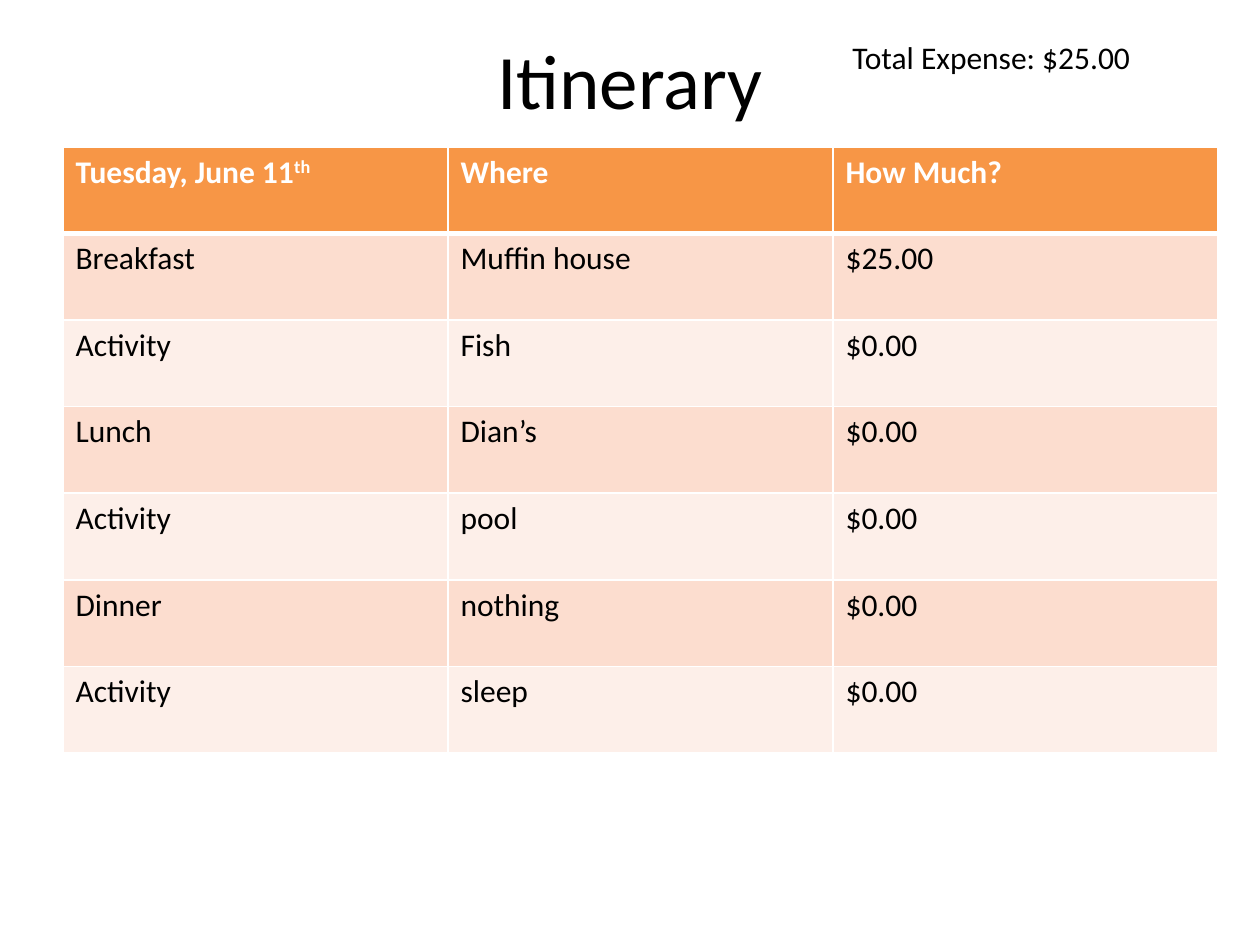
from lxml import etree
from pptx import Presentation
from pptx import util as u
from pptx.dml.color import RGBColor
from pptx.enum import text
from pptx.oxml import ns

PX = 914400 / 126
BLACK = RGBColor(0x00, 0x00, 0x00)
WHITE = RGBColor(0xFF, 0xFF, 0xFF)
ORANGE = RGBColor(0xF7, 0x96, 0x46)
PEACH = RGBColor(0xFC, 0xDD, 0xCF)
PALE_PEACH = RGBColor(0xFD, 0xEF, 0xE9)

HEADER = ["Tuesday, June 11", "Where", "How Much?"]
PLANS = [
    ["Breakfast", "Muffin house", "$25.00"],
    ["Activity", "Fish", "$0.00"],
    ["Lunch", "Dian’s", "$0.00"],
    ["Activity", "pool", "$0.00"],
    ["Dinner", "nothing", "$0.00"],
    ["Activity", "sleep", "$0.00"],
]


def px(*lengths):
    return [u.Emu(round(length * PX)) for length in lengths]


class SlideBuilder:
    font = "Calibri"
    body_size = 18
    title_size = 44

    def __init__(self, page):
        self.page = page

    def style(self, para, size, color, bold=False):
        for span in para.runs:
            span.font.name = self.font
            span.font.size = u.Pt(size)
            span.font.color.rgb = color
            span.font.bold = bold

    def title(self, words, *place):
        box = self.page.shapes.title
        box.left, box.top, box.width, box.height = px(*place)
        frame = box.text_frame
        frame.text = words
        frame.vertical_anchor = text.MSO_ANCHOR.MIDDLE
        para = frame.paragraphs[0]
        para.alignment = text.PP_ALIGN.CENTER
        self.style(para, self.title_size, BLACK)

    def label(self, words, *place):
        frame = self.page.shapes.add_textbox(*px(*place)).text_frame
        frame.word_wrap = True
        frame.auto_size = text.MSO_AUTO_SIZE.SHAPE_TO_FIT_TEXT
        frame.text = words
        self.style(frame.paragraphs[0], self.body_size, BLACK)

    def table(self, rows, *place):
        grid = self.page.shapes.add_table(
            len(rows), len(rows[0]), *px(*place)).table
        for r, row in enumerate(rows):
            fill = ORANGE if r == 0 else PEACH if r % 2 else PALE_PEACH
            for c, words in enumerate(row):
                cell = grid.cell(r, c)
                cell.text = words
                self.style(cell.text_frame.paragraphs[0], self.body_size,
                           WHITE if r == 0 else BLACK, bold=r == 0)
                # The rule under the header is heavier than the others
                self.borders(cell, top=3 if r == 1 else 1,
                             bottom=3 if r == 0 else 1)
                cell.fill.solid()
                cell.fill.fore_color.rgb = fill
        return grid

    def borders(self, cell, top, bottom):
        props = cell._tc.get_or_add_tcPr()
        for side, width in zip("LRTB", (1, 1, top, bottom)):
            line = etree.SubElement(props, ns.qn(f"a:ln{side}"),
                                    w=str(u.Pt(width)))
            solid = etree.SubElement(line, ns.qn("a:solidFill"))
            etree.SubElement(solid, ns.qn("a:srgbClr"), val=str(WHITE))

    def superscript(self, cell, words):
        para = cell.text_frame.paragraphs[0]
        span = para.add_run()
        span.text = words
        self.style(para, self.body_size, WHITE, bold=True)
        span._r.get_or_add_rPr().set("baseline", "30000")


def main():
    deck = Presentation()
    deck.slide_width, deck.slide_height = px(1260, 945)
    builder = SlideBuilder(deck.slides.add_slide(deck.slide_layouts[5]))

    # Heading and total
    builder.title("Itinerary", 63, 0, 1134, 158)
    builder.label("Total Expense: $25.00", 840, 32, 388, 50)

    # Day plan
    grid = builder.table([HEADER] + PLANS, 63, 147, 1155, 606)
    builder.superscript(grid.cell(0, 0), "th")

    deck.save("out.pptx")


if __name__ == "__main__":
    main()
